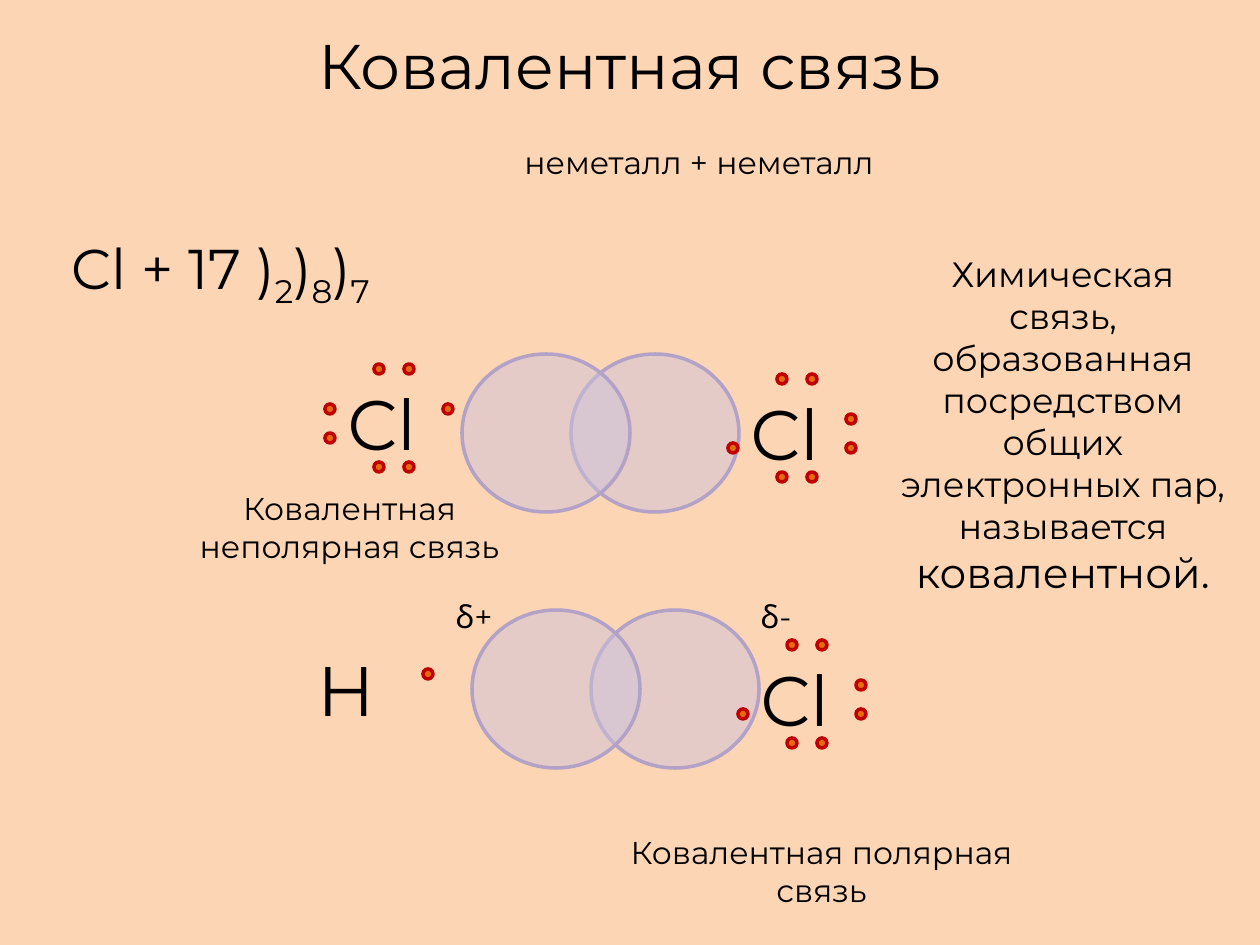
"""Builds a slide on covalent bonding with electron diagrams of Cl-Cl and H-Cl."""
from lxml.etree import SubElement
from pptx import Presentation
from pptx.dml.color import RGBColor
from pptx.enum.shapes import MSO_SHAPE
from pptx.enum.text import MSO_ANCHOR, MSO_AUTO_SIZE, PP_ALIGN
from pptx.oxml.ns import qn
from pptx.util import Inches, Pt

PX = 7257
COLORS = {
    "background": "FCD5B5",
    "text": "000000",
    "cloud": "CCC1DA",
    "cloud_line": "B3A2C7",
    "electron": "E46C0A",
    "electron_line": "C00000",
}


def write(box, text, size=18, align=PP_ALIGN.LEFT, baseline=0):
    frame = box.text_frame
    frame.word_wrap = True
    frame.auto_size = MSO_AUTO_SIZE.SHAPE_TO_FIT_TEXT
    frame.vertical_anchor = MSO_ANCHOR.TOP
    para = frame.paragraphs[0]
    para.alignment = align
    span = para.add_run()
    span.text = text
    span.font.name = "Montserrat"
    span.font.size = Pt(size)
    span.font.color.rgb = RGBColor.from_string(COLORS["text"])
    if baseline:
        span.font._element.set("baseline", str(baseline * 1000))


def add_ellipse(shapes, left, top, width, height, kind):
    ellipse = shapes.add_shape(MSO_SHAPE.OVAL, left * PX, top * PX, width * PX, height * PX)
    ellipse.shadow.inherit = False
    ellipse.fill.solid()
    ellipse.fill.fore_color.rgb = RGBColor.from_string(COLORS[kind])
    ellipse.line.color.rgb = RGBColor.from_string(COLORS[kind + "_line"])
    ellipse.line.width = Pt(2)
    return ellipse


deck = Presentation()
deck.slide_width, deck.slide_height = Inches(10), Inches(7.5)
page = deck.slides.add_slide(deck.slide_layouts[5])
page.background.fill.solid()
page.background.fill.fore_color.rgb = RGBColor.from_string(COLORS["background"])

title = page.shapes.title
title.left, title.top, title.width, title.height = 246 * PX, 20 * PX, 767 * PX, 89 * PX
write(title, "Ковалентная связь", size=36, align=PP_ALIGN.CENTER)

for left, top in [(591, 610), (472, 610), (571, 354), (462, 354)]:
    cloud = add_ellipse(page.shapes, left, top, 168, 158, "cloud")
    color = cloud.fill._xPr.find(qn("a:solidFill"))[0]
    SubElement(color, qn("a:alpha"), val="49000")

pairs = [(x, y) for x in (39, 69) for y in (-10, 88)]
left_chlorine = pairs + [(-10, 30), (-10, 59), (108, 30)]
right_chlorine = pairs + [(108, 30), (108, 59), (-10, 59)]
atoms = [
    ("Сl", 335, 374, 129, left_chlorine),
    ("Сl", 738, 384, 129, right_chlorine),
    ("Сl", 748, 650, 129, right_chlorine),
    ("Н", 305, 640, 178, [(118, 29)]),
]
for symbol, left, top, width, electrons in atoms:
    atom = page.shapes.add_group_shape()
    box = atom.shapes.add_textbox(left * PX, top * PX, width * PX, 97 * PX)
    write(box, symbol, size=40)
    for x, y in electrons:
        add_ellipse(atom.shapes, left + x, top + y, 10, 10, "electron")

labels = [
    ("неметалл + неметалл", 512, 137, 423, 50, PP_ALIGN.LEFT),
    ("δ+", 443, 591, 88, 50, PP_ALIGN.LEFT),
    ("δ-", 748, 591, 88, 50, PP_ALIGN.LEFT),
    ("Ковалентная полярная связь", 610, 827, 423, 89, PP_ALIGN.CENTER),
    ("Ковалентная неполярная связь", 138, 483, 423, 89, PP_ALIGN.CENTER),
]
for text, left, top, width, height, align in labels:
    box = page.shapes.add_textbox(left * PX, top * PX, width * PX, height * PX)
    write(box, text, align=align)

shells = page.shapes.add_textbox(59 * PX, 227 * PX, 452 * PX, 81 * PX)
write(shells, "Cl + 17 ", size=32)
for count in "287":
    write(shells, ")", size=32)
    write(shells, count, size=32, baseline=-25)

definition = page.shapes.add_textbox(886 * PX, 246 * PX, 354 * PX, 360 * PX)
write(
    definition,
    "Химическая связь, образованная посредством общих электронных пар, называется ",
    size=20,
    align=PP_ALIGN.CENTER,
)
write(definition, "ковалентной.", size=24, align=PP_ALIGN.CENTER)

deck.save("out.pptx")
